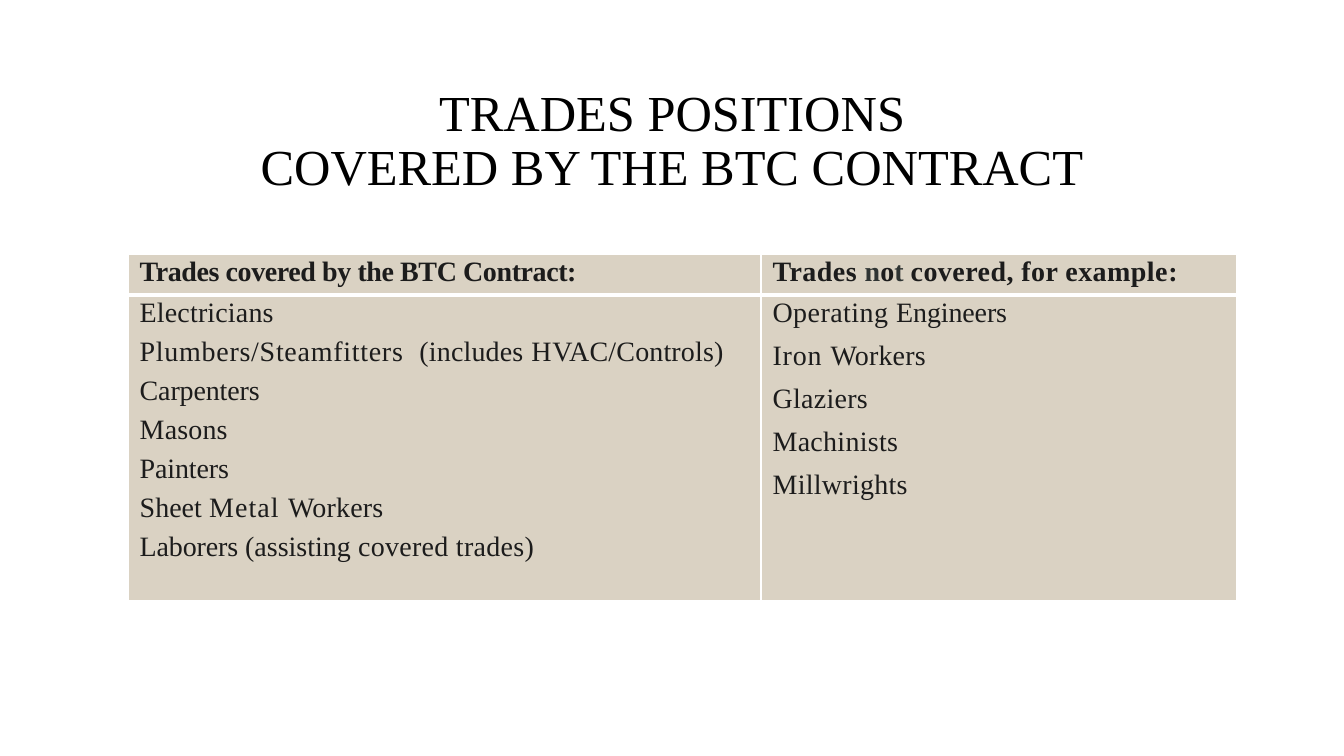
import pptx
import pptx.util
import pptx.dml.color
import pptx.enum.text
import pptx.oxml

Cm, Pt = pptx.util.Cm, pptx.util.Pt
RGB = pptx.dml.color.RGBColor
BLACK = RGB(0x00, 0x00, 0x00)
INK = RGB(0x1C, 0x1C, 0x1C)
SLATE = RGB(0x2F, 0x34, 0x33)
SAND = RGB(0xDA, 0xD2, 0xC3)
FIXED = Pt(20.4)


def write(para, runs, size=20, color=INK, bold=False, line=None, before=0, align=None):
    """Fill a paragraph with (text, letter spacing in points[, color]) runs."""
    para.line_spacing = line
    para.space_before = Pt(before)
    para.alignment = align
    for text, gap, *tint in runs:
        if text == "\n":
            para.add_line_break()
            continue
        run = para.add_run()
        run.text = text
        font = run.font
        font.name, font.size, font.bold = "Times New Roman", Pt(size), bold
        font.color.rgb = tint[0] if tint else color
        if gap:
            run._r.get_or_add_rPr().set("spc", str(round(gap * 100)))


def edge(cell, side, width):
    """Draw a white border on one side of a cell."""
    cell._tc.get_or_add_tcPr().append(pptx.oxml.parse_xml(
        f'<a:{side} xmlns:a="http://schemas.openxmlformats.org/drawingml/2006/main" '
        f'w="{Pt(width)}"><a:solidFill><a:srgbClr val="FFFFFF"/></a:solidFill></a:{side}>'))


deck = pptx.Presentation()
deck.slide_width, deck.slide_height = Cm(33.87), Cm(19.05)
slide = deck.slides.add_slide(deck.slide_layouts[6])

# Title
box = slide.shapes.add_textbox(Cm(2.97), Cm(1.35), Cm(27.94), Cm(4.47))
frame = box.text_frame
frame.word_wrap = True
frame.vertical_anchor = pptx.enum.text.MSO_ANCHOR.MIDDLE
write(frame.paragraphs[0],
      [("TRADES POSITIONS", 0), ("\n", 0), ("COVERED BY THE BTC CONTRACT", 0)],
      size=36, color=BLACK, line=0.9, align=pptx.enum.text.PP_ALIGN.CENTER)

# Cell contents: each paragraph is its runs and its format
heads = [
    [([("Trades covered by the BTC Contract:", -0.3)], dict(line=FIXED, bold=True))],
    [([("Trades ", 0.3), ("n", 0, SLATE), ("o", 0), ("t ", 0, SLATE),
       ("covered, for example", 0.3), (":", 0.4)], dict(line=FIXED, bold=True))],
]
loose = dict(line=1.37, before=0.5)
lists = [
    [([("Electricians", 0.1)], dict(line=FIXED)),
     ([("Plumbers/Steamfitters  ", 0.5), ("(includes", 0.1), (" H", 0.5),
       ("VAC/Controls)", 0.1)], dict(line=1.03, before=5.4)),
     ([("Carpenters", -0.1)], dict(line=1.25)),
     ([("Masons", 0.1)], dict(line=1.25)),
     ([("Painters", -0.1)], dict(before=5.7)),
     ([("Sheet ", 0), ("Metal ", 0.8), ("Workers", 0.1)], dict(before=5.3)),
     ([("Laborers ", -0.1), ("(assisting ", 0), ("covered trades)", 0.2)],
      dict(line=1.01, before=5.5))],
    [([("Operating ", 0.3), ("Engineers", -0.1)], dict(line=FIXED)),
     ([("Iron ", 0.6), ("Workers ", 0.1), ("\n", 0), ("Glaziers", 0.2)], loose),
     ([("Machinists", 0.2)], loose),
     ([("Millwrights", 0.2)], loose)],
]

# Table
table = slide.shapes.add_table(2, 2, Cm(3.23), Cm(6.4), Cm(27.94), Cm(8.73)).table
table.horz_banding = False
for col, width in zip(table.columns, (15.95, 11.99)):
    col.width = Cm(width)
for row, height in zip(table.rows, (1.03, 7.7)):
    row.height = Cm(height)

for r, row in enumerate((heads, lists)):
    for c, paras in enumerate(row):
        cell = table.cell(r, c)
        cell.margin_left = Cm(0.29)
        for side in ("lnL", "lnR", "lnT", "lnB"):
            shared = (r, side) in ((0, "lnB"), (1, "lnT"))
            edge(cell, side, 3 if shared else 1)
        cell.fill.solid()
        cell.fill.fore_color.rgb = SAND
        for i, (runs, form) in enumerate(paras):
            para = cell.text_frame.add_paragraph() if i else cell.text_frame.paragraphs[0]
            write(para, runs, **form)

deck.save("out.pptx")
